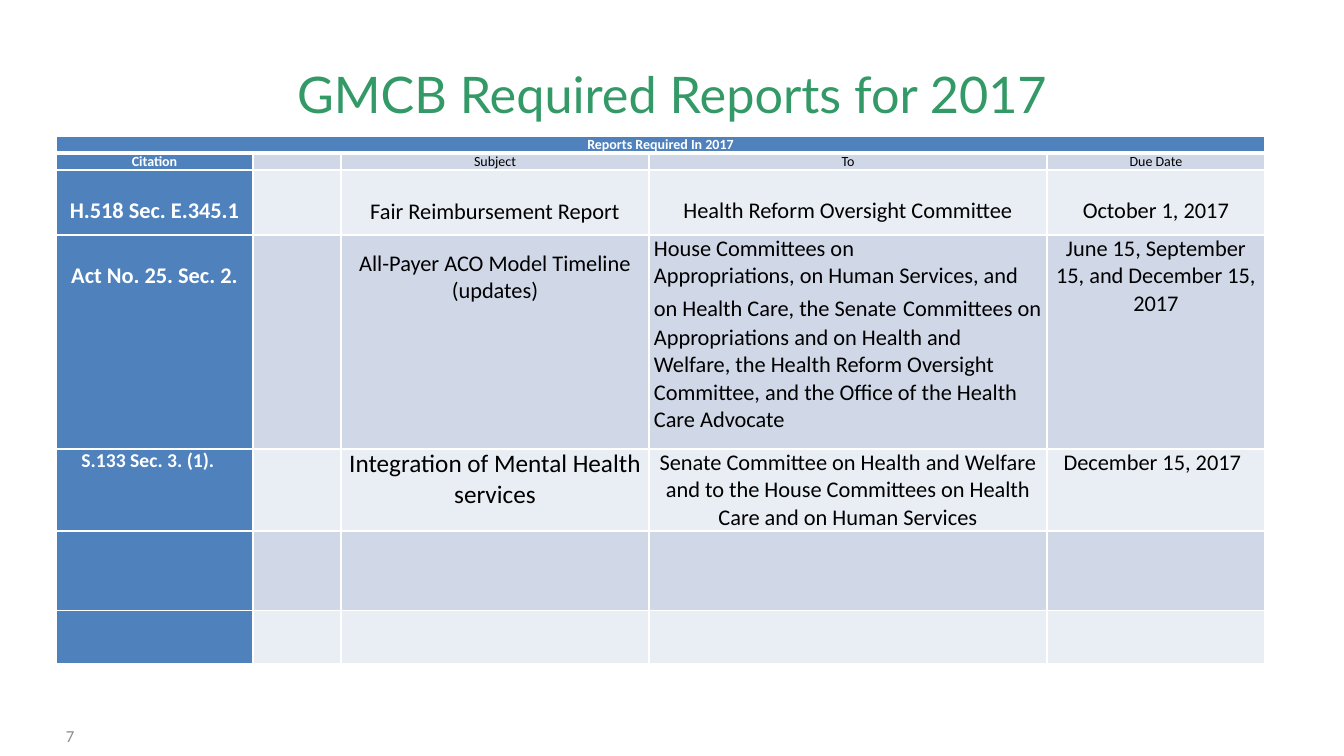
from lxml.etree import SubElement
from pptx import Presentation
from pptx.dml.color import RGBColor
from pptx.enum.text import MSO_ANCHOR, MSO_AUTO_SIZE, PP_ALIGN
from pptx.oxml.ns import qn
from pptx.util import Emu, Pt

# Content
TITLE = "GMCB Required Reports for 2017"
PAGE_NUMBER = "7"
BANNER = "Reports Required In 2017"
HEADINGS = ["Citation", "", "Subject", "To", "Due Date"]
COMMITTEES = [
    ["House Committees on"],
    ["Appropriations, on Human Services, and on Health Care, the Senate", " ",
     "Committees on Appropriations and on Health and Welfare, the Health Reform "
     "Oversight Committee, and the Office of the Health Care Advocate"],
]
# Each filled cell: paragraphs of runs, size in pt, top and right margin in px
REPORTS = [
    [([["H.518 Sec. E.345.1"]], 16, 27, 5), None,
     ([["Fair Reimbursement Report"]], 16, 28, 5),
     ([["Health Reform Oversight Committee"]], 16, 27, 5),
     ([["October 1, 2017"]], 16, 27, 5)],
    [([["Act No. 25. Sec. 2."]], 16, 27, 5), None,
     ([["All-Payer ACO Model Timeline (updates)"]], 16, 15, 5),
     (COMMITTEES, 16, 0, 5),
     ([["June 15, September 15, and December 15, 2017"]], 16, 0, 5)],
    [([["S.133 Sec. 3. (1)."]], 14, 0, 18), None,
     ([["Integration of Mental Health services"]], 18, 0, 5),
     ([["Senate Committee on Health and Welfare and to the House Committees "
        "on Health Care and on Human Services"]], 16, 0, 5),
     ([["December 15, 2017"]], 16, 0, 12)],
    [None] * 5,
    [None] * 5,
]
ROWS = [
    [([[BANNER]], 10, 0, 5)] + [None] * 4,
    [([[heading]], 10, 0, 5) if heading else None for heading in HEADINGS],
] + REPORTS

# Layout
COLUMN_WIDTHS = [197, 88, 308, 398, 218]
ROW_HEIGHTS = [17, 17, 65, 214, 82, 80, 53]
COLORS = {"title": "339966", "number": "8C8C8C", "header": "4F81BD",
          "dark": "D0D8E8", "light": "E9EDF4", "white": "FFFFFF", "black": "000000"}


def px(length):
    return Emu(round(length * 914400 / 100.8))


def rgb(name):
    return RGBColor.from_string(COLORS[name])


def style(font, size, color, face="Calibri", bold=False):
    font.size, font.name, font.bold = Pt(size), face, bold
    font.color.rgb = rgb(color)


def set_borders(cell, bottom):
    properties = cell._tc.get_or_add_tcPr()
    edges = [("lnL", 1), ("lnR", 1), ("lnT", 1), ("lnB", bottom)]
    for position, (edge, width) in enumerate(edges):
        line = SubElement(properties, qn("a:" + edge), w=str(Pt(width)))
        fill = SubElement(line, qn("a:solidFill"))
        SubElement(fill, qn("a:srgbClr"), val=COLORS["white"])
        properties.insert(position, line)


def write_cell(cell, entry, color, bold):
    if entry is None:
        SubElement(cell.text_frame.paragraphs[0]._p, qn("a:endParaRPr"), sz="1000")
        return
    paragraphs, size, top, right = entry
    cell.margin_top, cell.margin_right = px(top), px(right)
    for index, runs in enumerate(paragraphs):
        frame = cell.text_frame
        paragraph = frame.paragraphs[0] if index == 0 else frame.add_paragraph()
        paragraph.alignment = PP_ALIGN.LEFT if paragraphs is COMMITTEES else PP_ALIGN.CENTER
        style(paragraph.font, size, color, bold=bold)
        for text in runs:
            run = paragraph.add_run()
            run.text = text
            if text == " ":
                run.font.size = Pt(20)


def main():
    deck = Presentation()
    deck.slide_width, deck.slide_height = px(1344), px(756)
    slide = deck.slides.add_slide(deck.slide_layouts[5])

    # Title
    title = slide.shapes.title
    title.left, title.top, title.width, title.height = px(67), px(30), px(1210), px(126)
    title.text_frame.text = TITLE
    title.text_frame.auto_size = MSO_AUTO_SIZE.NONE
    title.text_frame.vertical_anchor = MSO_ANCHOR.MIDDLE
    title.text_frame.paragraphs[0].alignment = PP_ALIGN.CENTER
    style(title.text_frame.paragraphs[0].font, 36, "title", "Lato")

    # Page number
    number = slide.shapes.add_textbox(px(56), px(716), px(313), px(40)).text_frame
    number.word_wrap = True
    number.vertical_anchor = MSO_ANCHOR.MIDDLE
    number.text = PAGE_NUMBER
    style(number.paragraphs[0].font, 12, "number")

    # Reports table
    reports = slide.shapes.add_table(
        len(ROWS), len(COLUMN_WIDTHS), px(56), px(136),
        px(sum(COLUMN_WIDTHS)), px(sum(ROW_HEIGHTS))).table
    reports.first_row = reports.horz_banding = False
    for column, width in zip(reports.columns, COLUMN_WIDTHS):
        column.width = px(width)
    for row, height in zip(reports.rows, ROW_HEIGHTS):
        row.height = px(height)
    reports.cell(0, 0).merge(reports.cell(0, len(COLUMN_WIDTHS) - 1))

    for r, entries in enumerate(ROWS):
        for c, entry in enumerate(entries):
            cell = reports.cell(r, c)
            is_header = r == 0 or c == 0
            cell.margin_left = cell.margin_right = px(5)
            cell.margin_top = cell.margin_bottom = 0
            cell.fill.solid()
            cell.fill.fore_color.rgb = rgb(
                "header" if is_header else "dark" if r % 2 else "light")
            set_borders(cell, bottom=3 if r == 0 else 1)
            write_cell(cell, entry, "white" if is_header else "black", is_header)

    deck.save("out.pptx")


if __name__ == "__main__":
    main()
